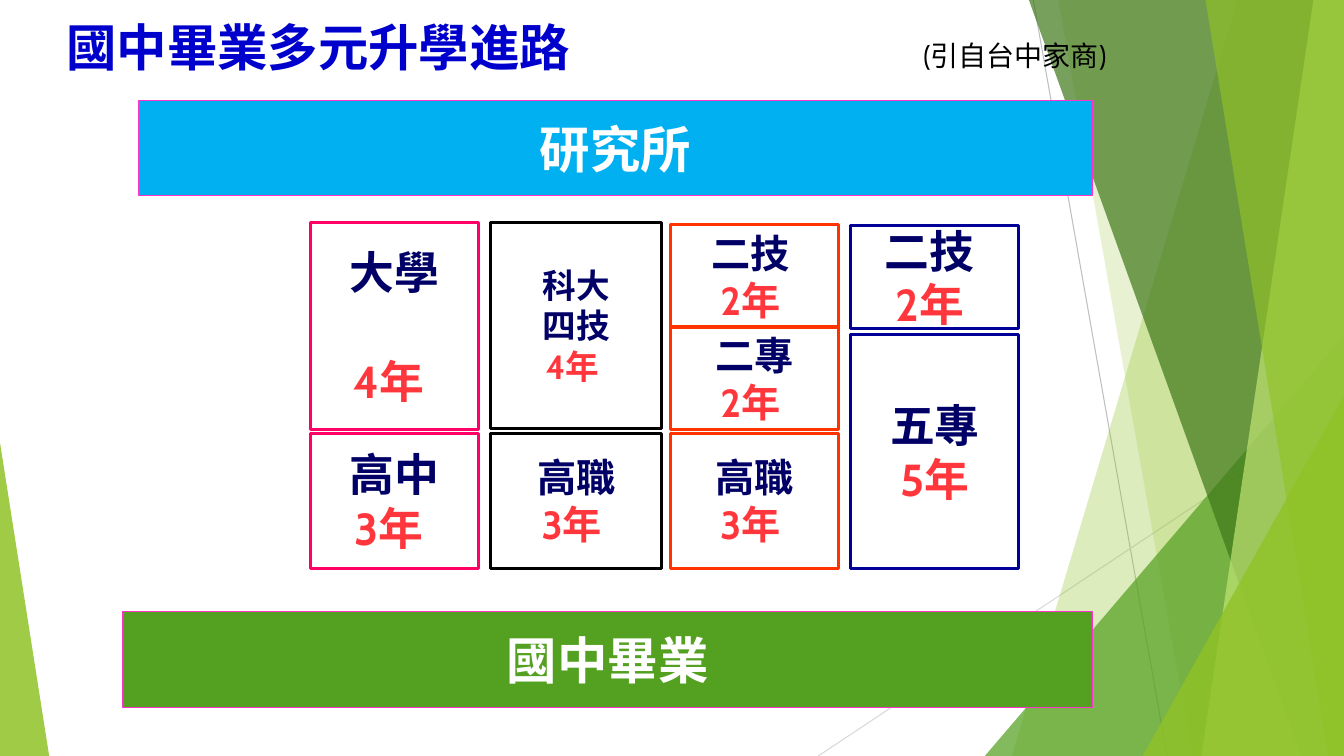
import pptx
import pptx.dml.color
import pptx.enum.shapes
import pptx.enum.text
import pptx.oxml.ns
import pptx.util
from lxml import etree
from pptx.util import Cm, Pt

WIDTH, HEIGHT = 33.87, 19.05
FONT = "Cabin"
NAVY, RED, WHITE = "000066", "FF373C", "FFFFFF"
PINK, BLACK, ORANGE, BLUE = "FF0066", "000000", "FF3300", "000099"
COLUMN_LEFT, COLUMN_PITCH = 7.82, 4.54

# column, top, width, height, border, font size, names, years, space before years
STAGES = [
    (0, 10.92, 4.24, 3.4, PINK, 32, ["高中"], "3年 ", 0),
    (0, 5.61, 4.24, 5.21, PINK, 32, ["大學"], "4年 ", 39),
    (1, 10.92, 4.32, 3.4, BLACK, 28, ["高職"], "3年 ", 0),
    (2, 10.92, 4.24, 3.4, ORANGE, 28, ["高職"], "3年 ", 0),
    (2, 8.23, 4.24, 2.59, ORANGE, 28, ["二專"], "2年 ", 0),
    (2, 5.66, 4.24, 2.59, ORANGE, 28, ["二技 "], "2年 ", 0),
    (3, 8.43, 4.24, 5.89, BLUE, 32, ["五專"], " 5年 ", 0),
    (3, 5.69, 4.24, 2.59, BLUE, 32, ["二技 "], "2年 ", 0),
    (1, 5.61, 4.32, 5.18, BLACK, 24, ["科大", "四技"], "4年 ", 0),
]


def rgb(color):
    return pptx.dml.color.RGBColor.from_string(color)


def fill_clear(sp, color, opacity):
    """Fill without an outline; opacity is in percent."""
    sp.shadow.inherit = False
    sp.fill.solid()
    sp.fill.fore_color.rgb = rgb(color)
    sp.line.fill.background()
    tag = sp.fill._xPr.find(".//" + pptx.oxml.ns.qn("a:srgbClr"))
    etree.SubElement(tag, pptx.oxml.ns.qn("a:alpha"), val=str(opacity * 1000))


def add_line(s, x1, y1, x2, y2, color):
    line = s.shapes.add_connector(
        pptx.enum.shapes.MSO_CONNECTOR.STRAIGHT, Cm(x1), Cm(y1), Cm(x2), Cm(y2))
    line.line.color.rgb = rgb(color)
    line.line.width = Pt(0.75)
    etree.SubElement(line._element.spPr, pptx.oxml.ns.qn("a:effectLst"))


def add_band(s, top_left, bottom_left, color, opacity):
    """Full-height band between a slanted left edge and the slide's right edge."""
    builder = s.shapes.build_freeform(Cm(top_left), 0)
    builder.add_line_segments([(Cm(WIDTH), 0), (Cm(WIDTH), Cm(HEIGHT)),
                               (Cm(bottom_left), Cm(HEIGHT))])
    fill_clear(builder.convert_to_shape(), color, opacity)


def add_triangle(s, x, y, width, apex, color, opacity):
    """Triangle standing on the slide's bottom edge; apex is 0 (left) to 1 (right)."""
    sp = s.shapes.add_shape(pptx.enum.shapes.MSO_SHAPE.ISOSCELES_TRIANGLE,
                            Cm(x), Cm(y), Cm(width), Cm(HEIGHT - y))
    sp.adjustments[0] = apex
    fill_clear(sp, color, opacity)


def add_run(p, text, size, color, bold=True):
    r = p.add_run()
    r.text = text
    r.font.name = FONT
    r.font.size = Pt(size)
    r.font.bold = bold
    r.font.color.rgb = rgb(color)


def add_box(s, x, y, width, height, border, weight, fill=None):
    sp = s.shapes.add_shape(pptx.enum.shapes.MSO_SHAPE.RECTANGLE,
                            Cm(x), Cm(y), Cm(width), Cm(height))
    sp.shadow.inherit = False
    if fill:
        sp.fill.solid()
        sp.fill.fore_color.rgb = rgb(fill)
    else:
        sp.fill.background()
    sp.line.color.rgb = rgb(border)
    sp.line.width = Pt(weight)
    tf = sp.text_frame
    tf.word_wrap = False
    tf.vertical_anchor = pptx.enum.text.MSO_ANCHOR.MIDDLE
    return tf


def add_centred(tf, index, text, size, color):
    p = tf.add_paragraph() if index else tf.paragraphs[0]
    p.alignment = pptx.enum.text.PP_ALIGN.CENTER
    add_run(p, text, size, color)
    return p


def add_banner(s, x, y, width, height, fill, text):
    tf = add_box(s, x, y, width, height, "FF33CC", 0.75, fill)
    add_centred(tf, 0, text, 36, WHITE)


def add_stage(s, column, top, width, height, border, size, names, years, gap):
    tf = add_box(s, COLUMN_LEFT + column * COLUMN_PITCH, top, width, height,
                 border, 2.25)
    for i, name in enumerate(names):
        add_centred(tf, i, name, size, NAVY)
    add_centred(tf, len(names), years, size, RED).space_before = Pt(gap)


def add_title(s):
    """Heading with its source set at a tab stop on the same line."""
    tf = s.shapes.add_textbox(Cm(1.42), Cm(0.28), Cm(30.48), Cm(2.21)).text_frame
    tf.word_wrap = True
    p = tf.paragraphs[0]
    add_run(p, "國中畢業多元升學進路\t", 36, "0000CC")
    add_run(p, "(引自台中家商)", 20, BLACK, bold=False)
    tabs = etree.SubElement(p._p.get_or_add_pPr(), pptx.oxml.ns.qn("a:tabLst"))
    etree.SubElement(tabs, pptx.oxml.ns.qn("a:tab"), pos=str(Cm(21.6)), algn="l")


def add_backdrop(s):
    add_line(s, 26.04, 0, 29.41, HEIGHT, "BFBFBF")
    add_line(s, WIDTH, 10.24, 20.62, HEIGHT, "D9D9D9")
    add_band(s, 31.19, 25.5, "90C226", 30)
    add_band(s, 26.67, 30.05, "90C226", 20)
    add_triangle(s, 24.82, 8.46, 9.05, 1, "54A021", 72)
    add_band(s, 25.93, 32.79, "3F7819", 70)
    add_band(s, 33.1, 30.28, "C0E474", 70)
    add_band(s, 30.38, 33.48, "90C226", 65)
    add_triangle(s, 28.8, 9.98, 5.07, 1, "90C226", 80)
    add_triangle(s, 0, 11.15, 1.24, 0, "90C226", 85)


def main():
    prs = pptx.Presentation()
    prs.slide_width, prs.slide_height = Cm(WIDTH), Cm(HEIGHT)
    s = prs.slides.add_slide(prs.slide_layouts[6])
    add_backdrop(s)
    add_banner(s, 3.1, 15.42, 24.43, 2.41, "54A021", "國中畢業")
    for stage in STAGES:
        add_stage(s, *stage)
    add_title(s)
    add_banner(s, 3.48, 2.54, 24.05, 2.39, "00B0F0", "研究所")
    prs.save("out.pptx")


if __name__ == "__main__":
    main()
